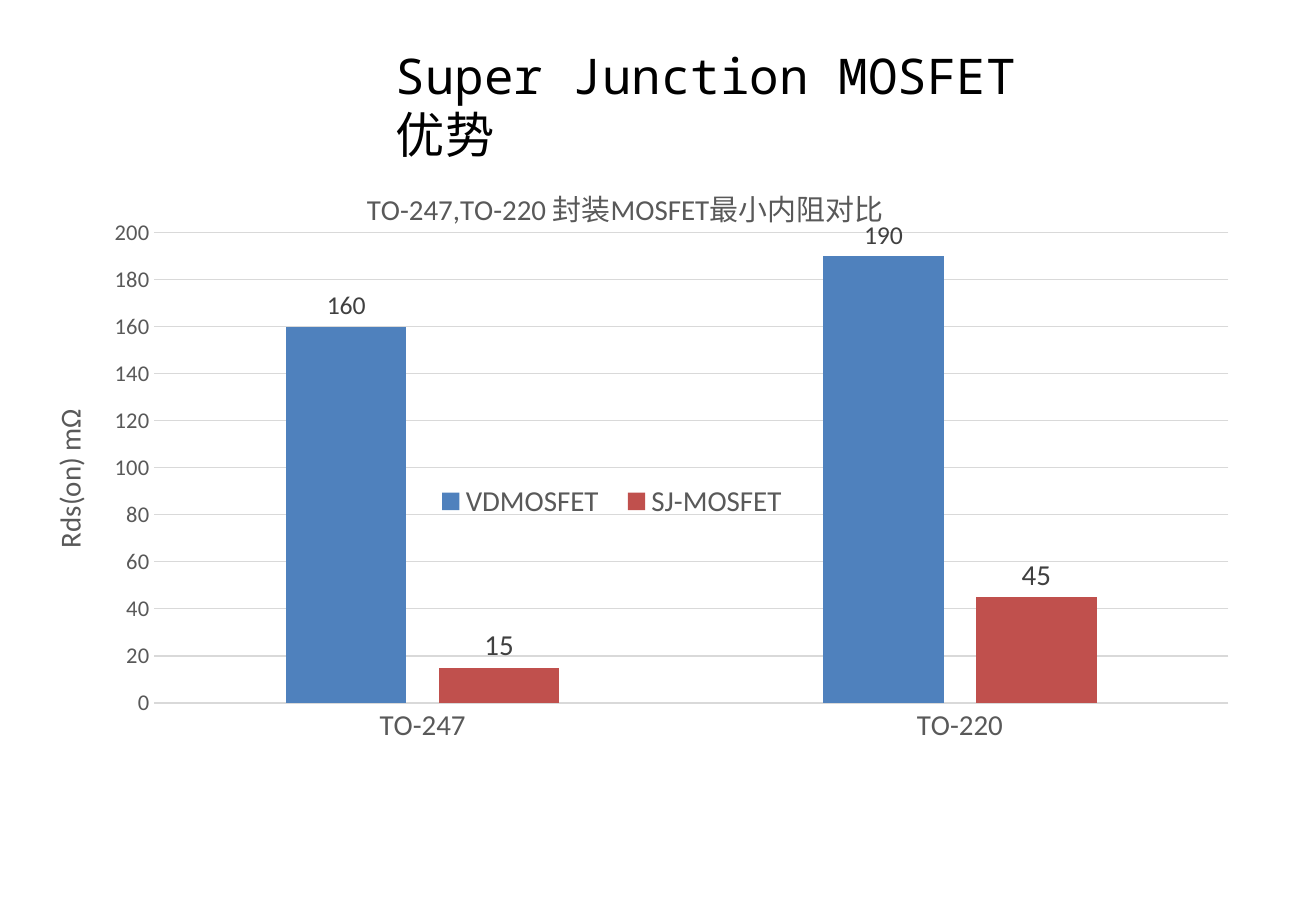
from dataclasses import dataclass

from lxml import etree
from pptx import Presentation
from pptx import util as u
from pptx.chart import data as cd
from pptx.dml.color import RGBColor
from pptx.enum import chart as ec, text as et
from pptx.oxml.ns import qn


@dataclass(frozen=True)
class Theme:
    head: str = "Noto Sans Mono"
    body: str = "Calibri"
    black: str = "000000"
    grey: str = "595959"
    dark: str = "404040"
    rule: str = "D9D9D9"
    blue: str = "4F81BD"
    red: str = "C0504D"
    big: float = 30.6
    mid: float = 18
    low: float = 16
    small: float = 14
    base: float = 10


T = Theme()
CASES = ["TO-247", "TO-220"]
# name, values, fill, label size
SERIES = [
    ("VDMOSFET", (160, 190), T.blue, T.low),
    ("SJ-MOSFET", (15, 45), T.red, T.mid),
]


def assign(item, **values):
    for key, value in values.items():
        setattr(item, key, value)


def style(font, size, color=T.grey, name=T.body):
    assign(font, size=u.Pt(size), name=name, bold=False)
    font.color.rgb = RGBColor.from_string(color)


def rule(line):
    line.color.rgb = RGBColor.from_string(T.rule)
    line.width = u.Pt(0.75)


def place(node, index, **values):
    """Give a chart part a manual layout, as fractions of the chart."""
    for old in node.findall(qn("c:layout")):
        node.remove(old)
    layout = etree.Element(qn("c:layout"))
    manual = etree.SubElement(layout, qn("c:manualLayout"))
    for key, value in values.items():
        etree.SubElement(manual, qn(f"c:{key}")).set("val", str(value))
    node.insert(index, layout)


def caption(title, words, x, y):
    frame = title.text_frame
    frame.text = words
    style(frame.paragraphs[0].runs[0].font, T.mid)
    place(title._element, 1, xMode="edge", yMode="edge", x=x, y=y)
    return frame


def add_title(slide, words):
    title = slide.shapes.title
    assign(title, left=u.Inches(3.32), top=u.Inches(0.34),
           width=u.Inches(5.96), height=u.Inches(1.12))
    frame = title.text_frame
    frame.text = words
    assign(frame, word_wrap=True, auto_size=et.MSO_AUTO_SIZE.NONE,
           vertical_anchor=et.MSO_ANCHOR.TOP)
    para = frame.paragraphs[0]
    para.alignment = et.PP_ALIGN.LEFT
    style(para.runs[0].font, T.big, T.black, T.head)


def format_axes(chart):
    cat, val = chart.category_axis, chart.value_axis
    for axis, size in ((cat, T.mid), (val, T.small)):
        assign(axis, major_tick_mark=ec.XL_TICK_MARK.NONE,
               minor_tick_mark=ec.XL_TICK_MARK.NONE)
        style(axis.tick_labels.font, size)
    rule(cat.format.line)
    val.format.line.fill.background()
    assign(val, minimum_scale=0, maximum_scale=200, major_unit=20,
           has_major_gridlines=True)
    rule(val.major_gridlines.format.line)
    frame = caption(val.axis_title, "Rds(on) mΩ", 0.02, 0.39)
    frame._txBody.bodyPr.set("rot", "-5400000")


def format_bars(plot):
    assign(plot, gap_width=219, overlap=-27, vary_by_categories=False)
    for bars, (_, _, color, size) in zip(plot.series, SERIES):
        bars.format.fill.solid()
        bars.format.fill.fore_color.rgb = RGBColor.from_string(color)
        labels = bars.data_labels
        assign(labels, show_value=True,
               position=ec.XL_LABEL_POSITION.OUTSIDE_END)
        style(labels.font, size, T.dark)


def add_chart(slide):
    data = cd.CategoryChartData()
    data.categories = CASES
    for name, values, _, _ in SERIES:
        data.add_series(name, values)
    box = [u.Inches(n) for n in (0.17, 1.43, 10.55, 5.28)]
    chart = slide.shapes.add_chart(
        ec.XL_CHART_TYPE.COLUMN_CLUSTERED, *box, data).chart
    style(chart.font, T.base, T.black)
    caption(chart.chart_title, "TO-247,TO-220 封装MOSFET最小内阻对比",
            0.28, 0.02)
    format_axes(chart)
    format_bars(chart.plots[0])

    # Legend floats between the bar groups
    chart.has_legend = True
    assign(chart.legend, position=ec.XL_LEGEND_POSITION.BOTTOM,
           include_in_layout=False)
    style(chart.legend.font, T.mid)
    place(chart.legend._element, 1, xMode="edge", yMode="edge",
          x=0.33, y=0.51, w=0.31, h=0.08)
    place(chart._chartSpace.chart.plotArea, 0, layoutTarget="inner",
          xMode="edge", yMode="edge", x=0.11, y=0.11, w=0.88, h=0.77)


def main():
    deck = Presentation()
    assign(deck, slide_width=u.Inches(11.37), slide_height=u.Inches(7.89))
    slide = deck.slides.add_slide(deck.slide_layouts[5])
    add_title(slide, "Super Junction MOSFET 优势")
    add_chart(slide)
    deck.save("out.pptx")


if __name__ == "__main__":
    main()
